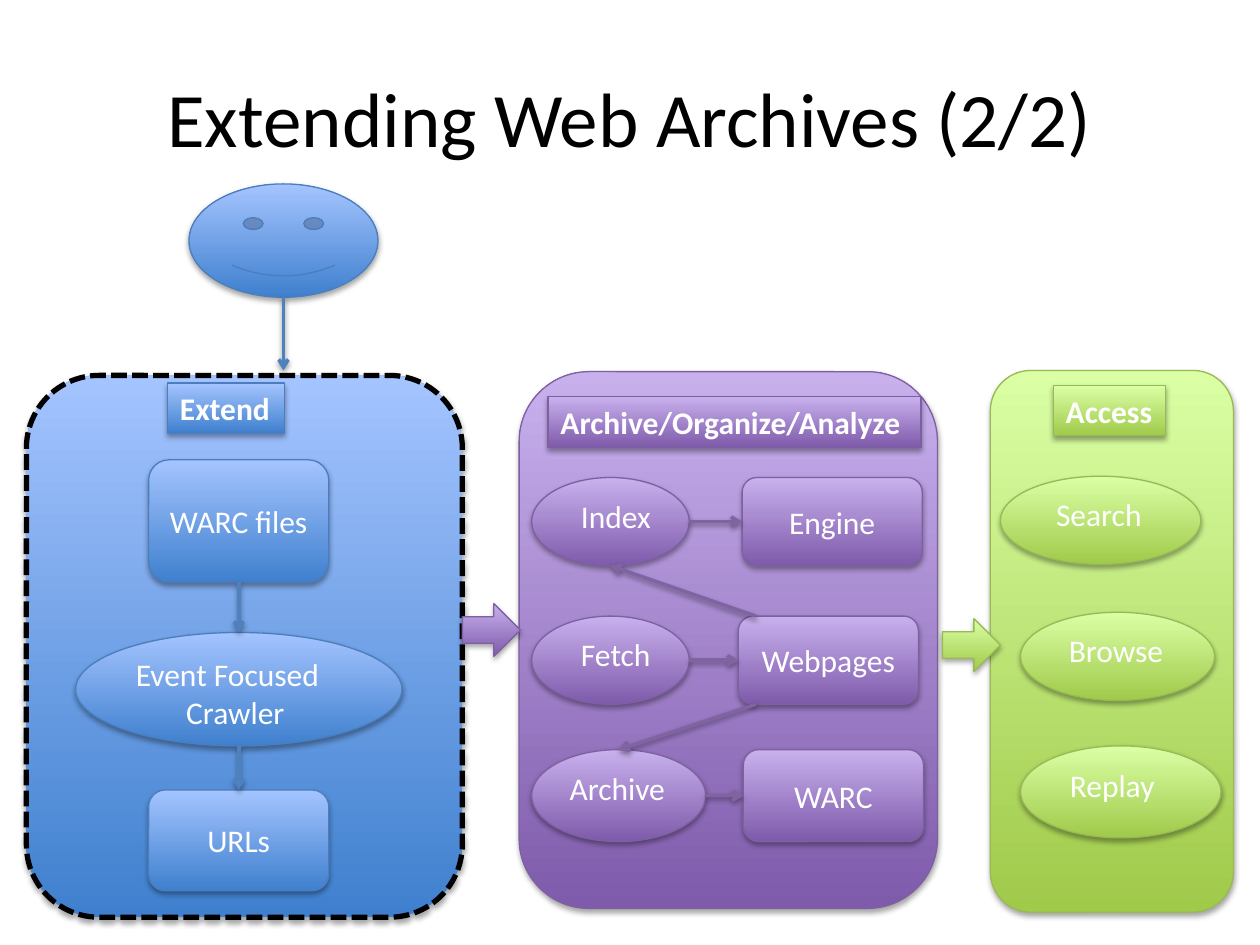
"""Builds the slide on extending web archives: three linked stages drawn as panels."""
from lxml import etree
from pptx import Presentation
from pptx.dml.color import RGBColor
from pptx.enum.dml import MSO_LINE
from pptx.enum.shapes import MSO_CONNECTOR, MSO_SHAPE
from pptx.enum.text import MSO_ANCHOR, MSO_AUTO_SIZE, PP_ALIGN
from pptx.oxml.ns import qn
from pptx.util import Inches, Pt

ROUND, OVAL, RECT = MSO_SHAPE.ROUNDED_RECTANGLE, MSO_SHAPE.OVAL, MSO_SHAPE.RECTANGLE
ARROW, SMILEY = MSO_SHAPE.RIGHT_ARROW, MSO_SHAPE.SMILEY_FACE
STRAIGHT, DASH = MSO_CONNECTOR.STRAIGHT, MSO_LINE.SQUARE_DOT
LEFT, CENTER = PP_ALIGN.LEFT, PP_ALIGN.CENTER
TOP, MIDDLE = MSO_ANCHOR.TOP, MSO_ANCHOR.MIDDLE
FIT = MSO_AUTO_SIZE.SHAPE_TO_FIT_TEXT
TOP_SIDE, LEFT_SIDE, BOTTOM_SIDE = 0, 1, 2

COLORS = {
    "blue": {"low": "3F80CE", "high": "A4C4FF", "edge": "4B7EBC", "link": "4F81BD"},
    "purple": {"low": "7F5BAB", "high": "C8B0ED", "edge": "7D60A0", "link": "8064A2"},
    "green": {"low": "A0CA4A", "high": "DAFFA5", "edge": "98B955"},
    "text": "FFFFFF", "title": "000000", "dash": "000000", "shadow": "000000",
}
FONT = "Calibri"
TITLE = "Extending Web Archives (2/2)"

PANELS = [
    ("blue", (0.21, 2.98, 3.46, 4.3), "Extend", (1.33, 3.04, 0.93, 0.4)),
    ("purple", (4.12, 2.95, 3.32, 4.26), "Archive/Organize/Analyze", (4.35, 3.15, 2.96, 0.4)),
    ("green", (7.86, 2.94, 1.93, 4.3), "Access", (8.36, 3.06, 0.89, 0.4)),
]
FLOW_ARROWS = [("purple", 3.67, 4.79), ("green", 7.48, 4.91)]
FLOW_SIZE = (0.46, 0.42)

USER = (1.5, 1.46, 1.5, 0.9)
CRAWL_LEFT, CRAWL_WIDTH = 1.18, 1.43
CRAWL_BOXES = [("WARC files", 3.65, 0.97), ("URLs", 6.27, 0.8)]
CRAWLER = (0.6, 5.02, 2.59, 0.9)
CRAWLER_LINES = [("Event Focused", 0), ("Crawler", 0.4)]

ROW_HEIGHTS = (0.7, 0.7, 0.73)
ARCHIVE_ROWS, ACCESS_ROWS = (3.79, 4.89, 5.95), (3.78, 4.86, 5.92)
STEP_LEFT, RESULT_WIDTH = 4.22, 1.43
STEPS = [
    ("Index", 0.11, 1.25, "Engine", 5.89),
    ("Fetch", 0.11, 1.25, "Webpages", 5.86),
    ("Archive", 0, 1.38, "WARC", 5.9),
]
SERVICES = [("Search", 0.11, 7.94, 1.59), ("Browse", 0.06, 8.1, 1.54), ("Replay", 0.06, 8.1, 1.59)]

prs = Presentation()
prs.slide_width, prs.slide_height = Inches(10), Inches(7.5)
slide = prs.slides.add_slide(prs.slide_layouts[5])


def rgb(value):
    return RGBColor.from_string(value)


def add_shadow(effects, opacity, distance):
    shadow = etree.SubElement(effects, qn("a:outerShdw"), blurRad=str(Pt(3.1)),
                              dist=str(Pt(distance)), dir="5400000", rotWithShape="0")
    color = etree.SubElement(shadow, qn("a:srgbClr"), val=COLORS["shadow"])
    etree.SubElement(color, qn("a:alpha"), val=str(opacity * 1000))


def add_block(kind, box, tone):
    block = slide.shapes.add_shape(kind, *map(Inches, box))
    palette = COLORS[tone]
    block.fill.gradient()
    block.fill.gradient_angle = 90
    for stop, end in zip(block.fill.gradient_stops, ("low", "high")):
        stop.color.rgb = rgb(palette[end])
    block.line.color.rgb = rgb(palette["edge"])
    block.line.width = Pt(0.75)
    block.shadow.inherit = False
    add_shadow(block._element.spPr.find(qn("a:effectLst")), 35, 1.8)
    return block


def write(block, lines, align=CENTER, anchor=MIDDLE, bold=False):
    frame = block.text_frame
    frame.vertical_anchor = anchor
    frame.text = "\n".join(text for text, _ in lines)
    for paragraph, (_, indent) in zip(frame.paragraphs, lines):
        paragraph.alignment = align
        paragraph.font.name, paragraph.font.size = FONT, Pt(18)
        paragraph.font.bold = bold
        paragraph.font.color.rgb = rgb(COLORS["text"])
        if indent:
            paragraph._p.get_or_add_pPr().set("marL", str(Inches(indent)))


def add_box(text, box, tone):
    block = add_block(ROUND, box, tone)
    write(block, [(text, 0)])
    return block


def add_oval(lines, box, tone):
    block = add_block(OVAL, box, tone)
    write(block, lines, LEFT, TOP)
    return block


def link(start, end, tone, begin=None, finish=None):
    line = slide.shapes.add_connector(STRAIGHT, *start, *end)
    line.line.color.rgb = rgb(COLORS[tone]["link"])
    line.line.width = Pt(2)
    if begin:
        line.begin_connect(*begin)
    if finish:
        line.end_connect(*finish)
    etree.SubElement(line.line._get_or_add_ln(), qn("a:tailEnd"), type="arrow")
    add_shadow(etree.SubElement(line._element.spPr, qn("a:effectLst")), 38, 1.6)


def bottom_of(block):
    return block.left + block.width // 2, block.top + block.height


def top_of(block):
    return block.left + block.width // 2, block.top


def right_of(block):
    return block.left + block.width, block.top + block.height // 2


def left_of(block):
    return block.left, block.top + block.height // 2


title = slide.shapes.title
title.left, title.top, title.width, title.height = map(Inches, (0.5, 0.3, 9, 1.25))
title.text_frame.text = TITLE
title.text_frame.vertical_anchor = MIDDLE
heading = title.text_frame.paragraphs[0]
heading.alignment = CENTER
heading.font.name, heading.font.size = FONT, Pt(44)
heading.font.color.rgb = rgb(COLORS["title"])

user = add_block(SMILEY, USER, "blue")
panels = [add_block(ROUND, box, tone) for tone, box, _, _ in PANELS]
extend_edge = panels[0].line
extend_edge.color.rgb = rgb(COLORS["dash"])
extend_edge.width, extend_edge.dash_style = Pt(3), DASH

for tone, _, label, box in PANELS:
    tag = add_block(RECT, box, tone)
    write(tag, [(label, 0)], LEFT, TOP, True)
    tag.text_frame.word_wrap = False
    tag.text_frame.auto_size = FIT

warc_files, urls = [add_box(text, (CRAWL_LEFT, top, CRAWL_WIDTH, height), "blue")
                    for text, top, height in CRAWL_BOXES]
crawler = add_oval(CRAWLER_LINES, CRAWLER, "blue")

steps, results = [], []
for (step, indent, width, result, left), top, height in zip(STEPS, ARCHIVE_ROWS, ROW_HEIGHTS):
    steps.append(add_oval([(step, indent)], (STEP_LEFT, top, width, height), "purple"))
    results.append(add_box(result, (left, top, RESULT_WIDTH, height), "purple"))

for (service, indent, left, width), top, height in zip(SERVICES, ACCESS_ROWS, ROW_HEIGHTS):
    add_oval([(service, indent)], (left, top, width, height), "green")

for tone, left, top in FLOW_ARROWS:
    add_block(ARROW, (left, top, *FLOW_SIZE), tone)

link(bottom_of(user), (bottom_of(user)[0], Inches(2.94)), "blue")
link(bottom_of(warc_files), top_of(crawler), "blue",
     (warc_files, BOTTOM_SIDE), (crawler, TOP_SIDE))
link(bottom_of(crawler), top_of(urls), "blue", finish=(urls, TOP_SIDE))
for step, result in zip(steps, results):
    link(right_of(step), left_of(result), "purple", finish=(result, LEFT_SIDE))

index, _, archive = steps
webpages = results[1]
corner = webpages.left + Inches(0.14)
link((corner, webpages.top), bottom_of(index), "purple")
link((corner, bottom_of(webpages)[1]), top_of(archive), "purple", finish=(archive, TOP_SIDE))

prs.save("out.pptx")
